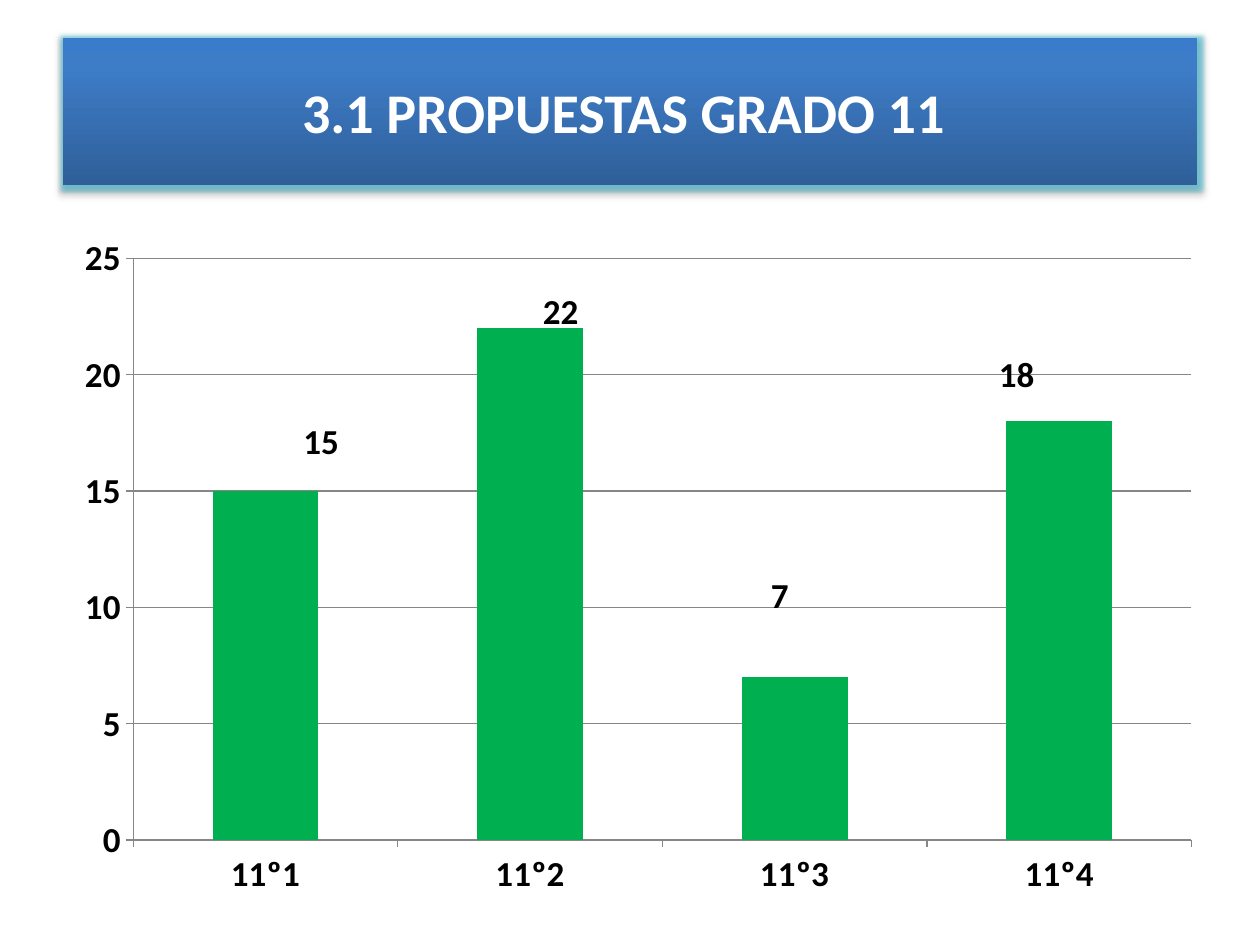
import pptx
import pptx.chart.data
import pptx.dml.color
import pptx.enum.chart
import pptx.enum.text
import pptx.oxml
import pptx.oxml.ns
import pptx.util

Inches = pptx.util.Inches
FONT = "Calibri"
COLORS = {"text": "000000", "title": "FFFFFF", "bar": "00B050",
          "grid": "868686", "glow": "4BC5DE", "shade": "000000"}
BLUES = [(0, "2F5F99"), (80, "3D7CC7"), (100, "3A7CCB")]
VOTES = {"11º1": 15, "11º2": 22, "11º3": 7, "11º4": 18}
SPOTS = [(2.31, 3.28, 1), (4.21, 2.25, 1), (6.02, 4.5, 1), (7.83, 2.75, 0.72)]


def color(name):
    return pptx.dml.color.RGBColor.from_string(COLORS[name])


def style(font, size, tone="text"):
    font.name = FONT
    font.size = pptx.util.Pt(size)
    font.bold = True
    font.color.rgb = color(tone)


def add_xml(parent, text):
    space = pptx.oxml.ns.nsdecls("a", "c")
    tag, rest = text[1:].split(">", 1)
    parent.append(pptx.oxml.parse_xml(f"<{tag} {space}>{rest}"))


def add_title(slide, text):
    title = slide.shapes.title
    title.left, title.top = Inches(0.5), Inches(0.3)
    title.width, title.height = Inches(9), Inches(1.17)
    stops = "".join(f'<a:gs pos="{pos * 1000}"><a:srgbClr val="{tone}"/></a:gs>'
                    for pos, tone in BLUES)
    props = title.element.spPr
    add_xml(props, f'<a:gradFill><a:gsLst>{stops}</a:gsLst>'
                   '<a:lin ang="16200000" scaled="0"/></a:gradFill>')
    add_xml(props, '<a:effectLst><a:glow rad="63500">'
                   f'<a:srgbClr val="{COLORS["glow"]}"><a:alpha val="60000"/></a:srgbClr>'
                   '</a:glow><a:outerShdw blurRad="39400" dist="22900" dir="5400000" '
                   f'rotWithShape="0"><a:srgbClr val="{COLORS["shade"]}">'
                   '<a:alpha val="35000"/></a:srgbClr></a:outerShdw></a:effectLst>')
    frame = title.text_frame
    frame.vertical_anchor = pptx.enum.text.MSO_ANCHOR.MIDDLE
    para = frame.paragraphs[0]
    para.alignment = pptx.enum.text.PP_ALIGN.CENTER
    run = para.add_run()
    run.text = text
    style(run.font, 32, "title")


def set_axis(axis):
    axis.major_tick_mark = pptx.enum.chart.XL_TICK_MARK.OUTSIDE
    axis.format.line.color.rgb = color("grid")
    axis.format.line.width = pptx.util.Pt(0.75)
    style(axis.tick_labels.font, 20)


def add_bars(slide):
    data = pptx.chart.data.CategoryChartData()
    data.categories = list(VOTES)
    data.add_series("Series 1", list(VOTES.values()))
    chart = slide.shapes.add_chart(
        pptx.enum.chart.XL_CHART_TYPE.COLUMN_STACKED, Inches(0.51), Inches(1.78),
        Inches(9.13), Inches(5.43), data).chart
    chart.has_legend = chart.has_title = False
    chart.font.name = FONT
    chart.font.size = pptx.util.Pt(10)
    plot = chart.plots[0]
    plot.gap_width, plot.overlap = 150, 100
    plot.vary_by_categories = False
    fill = plot.series[0].format.fill
    fill.solid()
    fill.fore_color.rgb = color("bar")
    set_axis(chart.category_axis)
    scale = chart.value_axis
    set_axis(scale)
    scale.minimum_scale, scale.maximum_scale, scale.major_unit = 0, 25, 5
    scale.has_major_gridlines = True
    line = scale.major_gridlines.format.line
    line.color.rgb = color("grid")
    line.width = pptx.util.Pt(0.75)
    place_plot(chart)


def place_plot(chart):
    """Fix the inner plot area as fractions of the chart frame."""
    area = chart.element.chart.plotArea
    for old in area.findall(pptx.oxml.ns.qn("c:layout")):
        area.remove(old)
    spans = "".join(f'<c:{key} val="{val}"/>' for key, val in
                    [("x", 0.06), ("y", 0.05), ("w", 0.92), ("h", 0.85)])
    add_xml(area, '<c:layout><c:manualLayout><c:layoutTarget val="inner"/>'
                  '<c:xMode val="edge"/><c:yMode val="edge"/>'
                  f'{spans}</c:manualLayout></c:layout>')
    area.insert(0, area[-1])


def add_label(slide, text, left, top, height):
    box = slide.shapes.add_textbox(Inches(left), Inches(top), Inches(1), Inches(height))
    box.text_frame.word_wrap = False
    run = box.text_frame.paragraphs[0].add_run()
    run.text = text
    style(run.font, 20)


def main():
    deck = pptx.Presentation()
    deck.slide_width, deck.slide_height = Inches(10), Inches(7.5)
    slide = deck.slides.add_slide(deck.slide_layouts[5])
    add_title(slide, "3.1 PROPUESTAS GRADO 11 ")
    add_bars(slide)
    for vote, spot in zip(VOTES.values(), SPOTS):
        add_label(slide, str(vote), *spot)
    deck.save("out.pptx")


if __name__ == "__main__":
    main()
